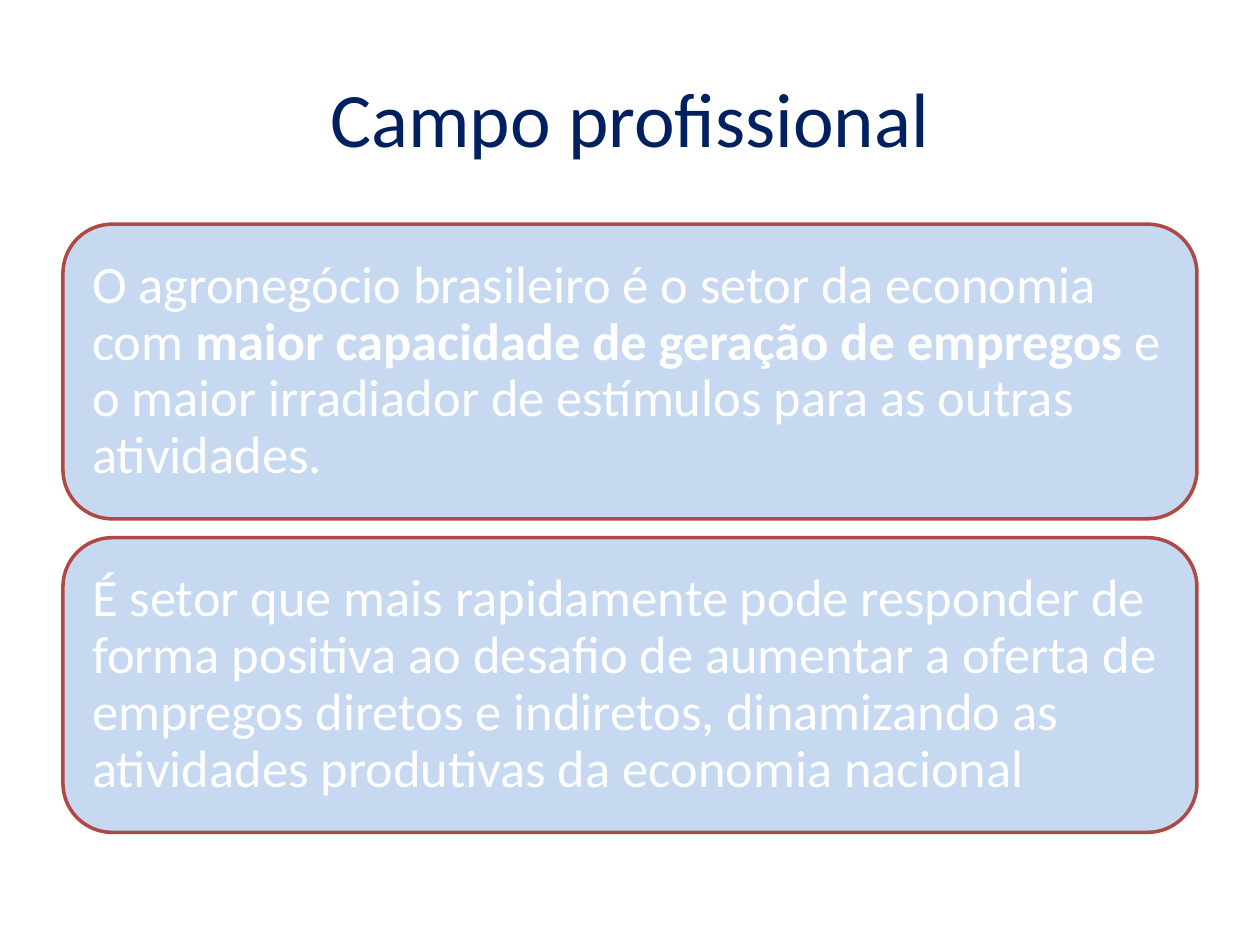
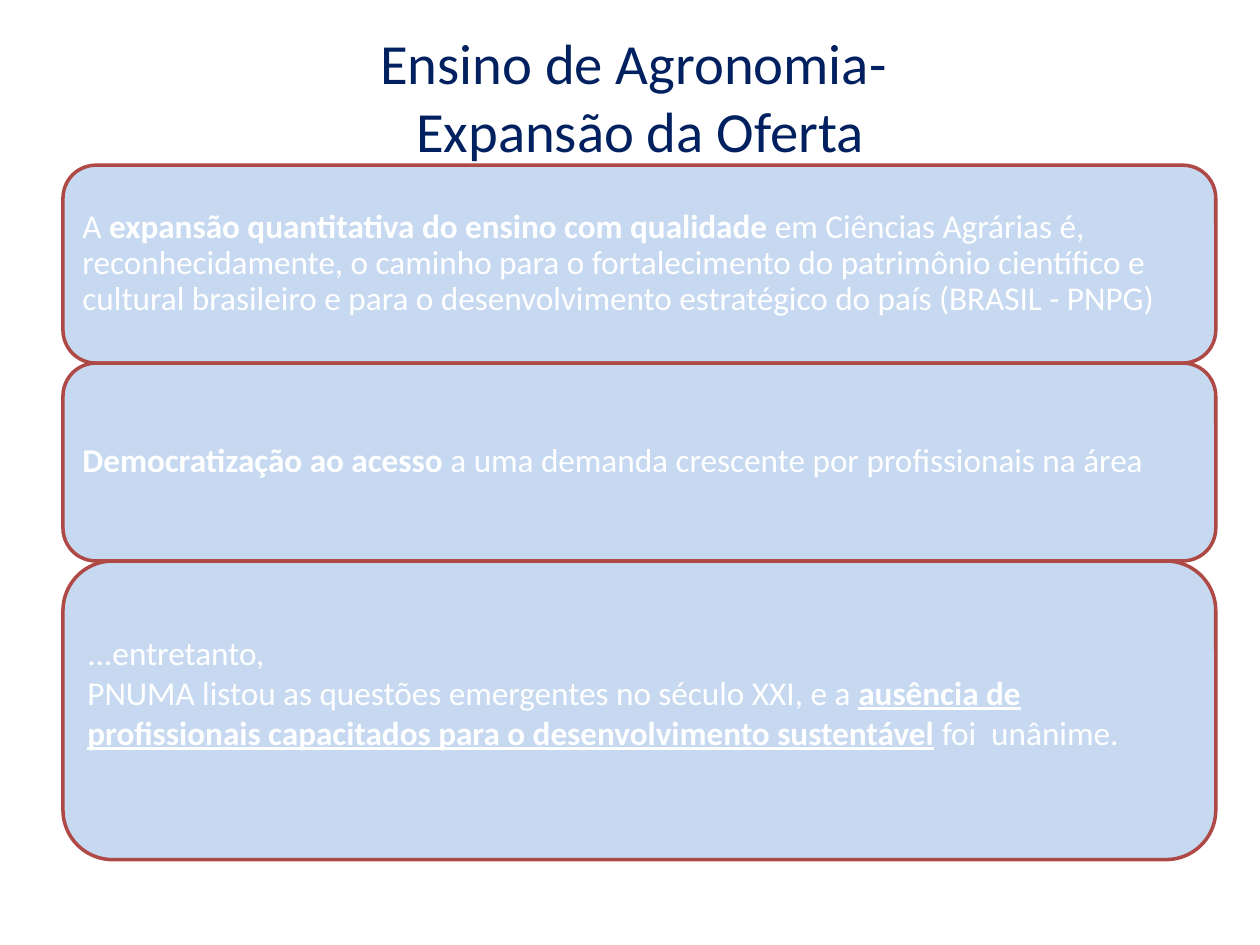
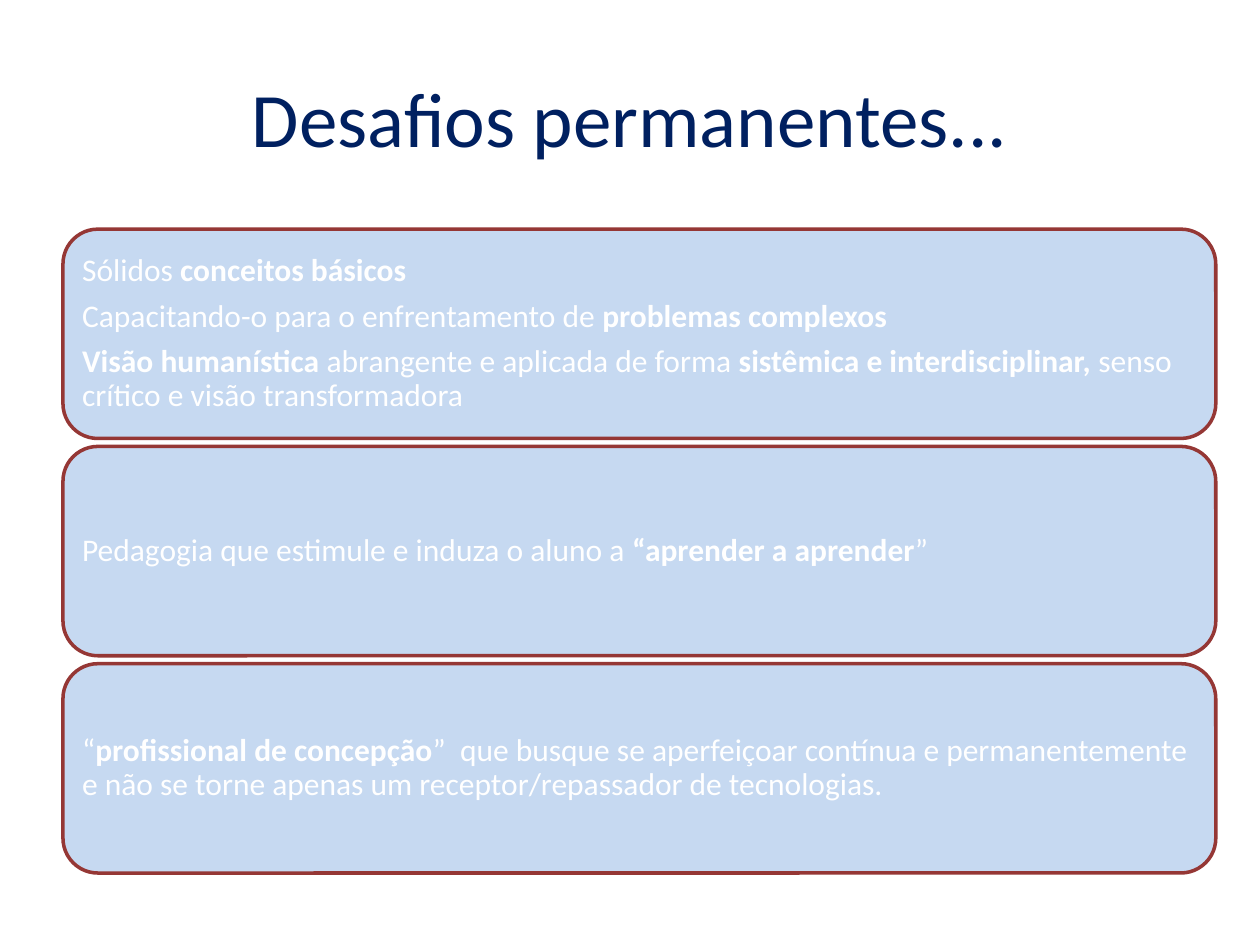
import pptx
import pptx.util
import pptx.dml.color
import pptx.enum.shapes
import pptx.enum.text

Cm = pptx.util.Cm
Pt = pptx.util.Pt
RGBColor = pptx.dml.color.RGBColor

NAVY = RGBColor(0x00, 0x20, 0x60)
PALE_BLUE = RGBColor(0xC6, 0xD9, 0xF1)
WHITE = RGBColor(0xFF, 0xFF, 0xFF)
RED = RGBColor(0xAE, 0x49, 0x46)
DARK_RED = RGBColor(0x95, 0x37, 0x35)
FONT = "Calibri"
LEFT = 1.27


def set_font(para, size, color):
    para.font.name = FONT
    para.font.size = Pt(size)
    para.font.color.rgb = color


def add_marked_text(para, text, underline):
    for index, part in enumerate(text.split("*")):
        if part:
            span = para.add_run()
            span.text = part
            if index % 2:
                span.font.bold = True
                if underline:
                    span.font.underline = True


pages = [
    {
        "title": "Campo profissional", "title_size": 44, "title_box": (1.27, 0.76, 22.86, 3.18),
        "top": 4.52, "width": 22.86, "gap": 0.38, "line": RED, "size": 30, "inset": 0.3,
        "cards": [
            (5.94, ["O agronegócio brasileiro é o setor da economia com *maior capacidade de geração "
                    "de empregos *e o maior irradiador de estímulos para as outras atividades."]),
            (5.94, ["É setor que mais rapidamente pode responder de forma positiva ao desafio de "
                    "aumentar a oferta de empregos diretos e indiretos, dinamizando as atividades "
                    "produtivas da economia nacional"]),
        ],
    },
    {
        "title": "Ensino de Agronomia- \vExpansão da Oferta", "title_size": 32.4,
        "title_box": (1.7, 0.76, 22.4, 2.36),
        "top": 3.33, "width": 23.24, "gap": 0, "line": RED, "size": 19, "inset": 0.2,
        "cards": [
            (3.99, ["A *expansão quantitativa do ensino com qualidade *em Ciências Agrárias é, "
                    "reconhecidamente, o caminho para o fortalecimento do patrimônio científico e "
                    "cultural brasileiro e para o desenvolvimento estratégico do país (BRASIL - PNPG)"]),
            (3.99, ["*Democratização ao acesso *a uma demanda crescente por profissionais na área"]),
            (6.02, ["...entretanto,",
                    "PNUMA listou as questões emergentes no século XXI, e a *ausência de profissionais "
                    "capacitados para o desenvolvimento sustentável* foi  unânime."]),
        ],
        "warning": 2,
    },
    {
        "title": "Desafios permanentes...", "title_size": 44, "title_box": (1.27, 0.76, 22.86, 3.18),
        "top": 4.62, "width": 23.24, "gap": 0.16, "line": DARK_RED, "size": 18, "inset": 0.18,
        "cards": [
            (4.22, ["Sólidos *conceitos básicos*",
                    "Capacitando-o para o enfrentamento de *problemas complexos *",
                    "*Visão humanística *abrangente e aplicada de forma *sistêmica e "
                    "interdisciplinar, *senso crítico e visão transformadora"]),
            (4.22, ["Pedagogia que estimule e induza o aluno a *“aprender a aprender*”"]),
            (4.22, ["“*profissional de concepção*”  que busque se aperfeiçoar contínua e "
                    "permanentemente e não se torne apenas um receptor/repassador de tecnologias."]),
        ],
    },
]

deck = pptx.Presentation()
deck.slide_width = Cm(25.4)
deck.slide_height = Cm(19.05)

for content in pages:
    page = deck.slides.add_slide(deck.slide_layouts[6])

    box = page.shapes.add_textbox(*[Cm(length) for length in content["title_box"]])
    frame = box.text_frame
    frame.word_wrap = True
    frame.vertical_anchor = pptx.enum.text.MSO_ANCHOR.MIDDLE
    para = frame.paragraphs[0]
    para.text = content["title"]
    para.alignment = pptx.enum.text.PP_ALIGN.CENTER
    set_font(para, content["title_size"], NAVY)

    top = content["top"]
    for number, (height, texts) in enumerate(content["cards"]):
        warning = number == content.get("warning")
        card = page.shapes.add_shape(
            pptx.enum.shapes.MSO_SHAPE.ROUNDED_RECTANGLE,
            Cm(LEFT), Cm(top), Cm(content["width"]), Cm(height))
        card.shadow.inherit = False
        card.fill.solid()
        card.fill.fore_color.rgb = PALE_BLUE
        card.line.color.rgb = content["line"]
        card.line.width = Pt(2)
        frame = card.text_frame
        frame.word_wrap = True
        frame.vertical_anchor = pptx.enum.text.MSO_ANCHOR.MIDDLE
        inset = Cm(content["inset"])
        frame.margin_left = frame.margin_right = frame.margin_top = inset
        frame.margin_bottom = Cm(0.94) if warning else inset
        for index, text in enumerate(texts):
            para = frame.add_paragraph() if index else frame.paragraphs[0]
            para.alignment = pptx.enum.text.PP_ALIGN.LEFT
            set_font(para, content["size"], WHITE)
            if not warning:
                para.line_spacing = 0.9
                if index:
                    para.space_before = Pt(0.35 * content["size"])
            add_marked_text(para, text, warning)
        top += height + content["gap"]

deck.save("out.pptx")
